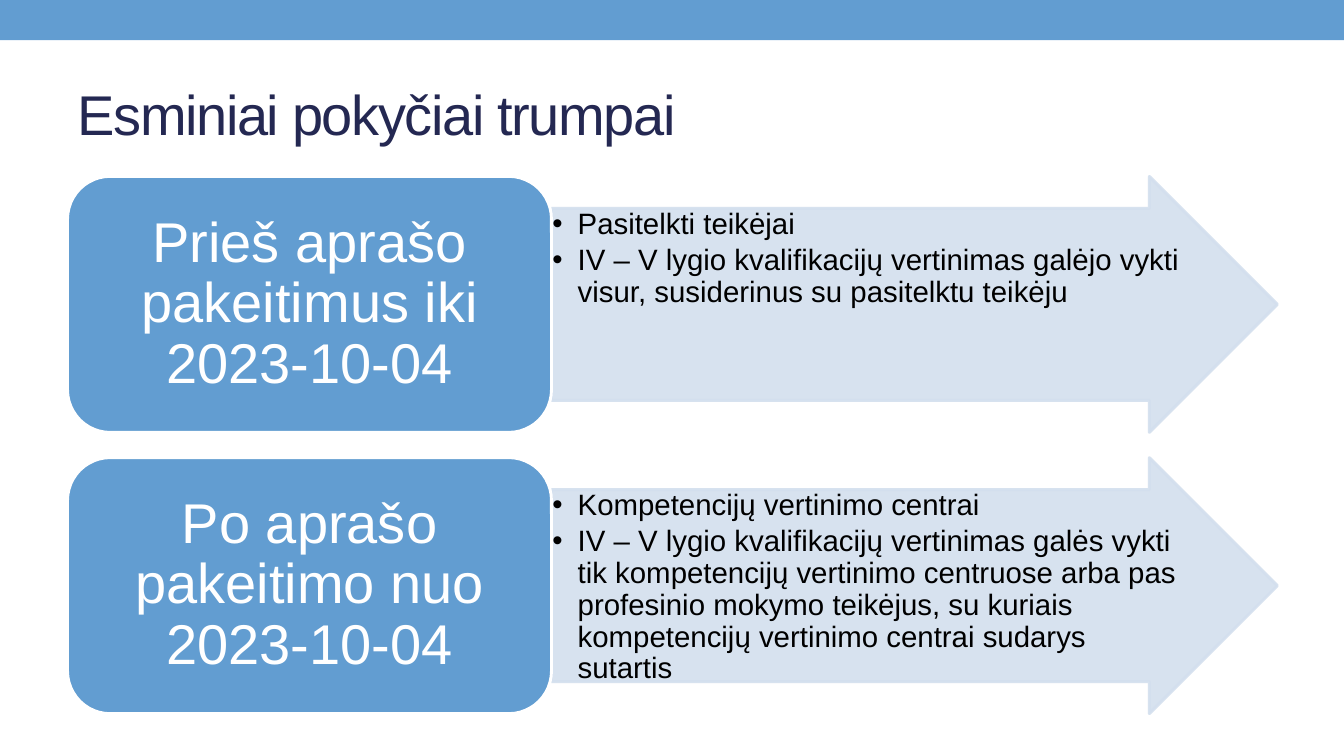
from dataclasses import dataclass

from lxml.etree import SubElement
from pptx import Presentation
from pptx.dml.color import RGBColor
from pptx.enum.shapes import MSO_SHAPE as Preset
from pptx.enum.text import MSO_ANCHOR as Anchor, PP_ALIGN as Align
from pptx.oxml.ns import qn
from pptx.util import Inches, Pt


@dataclass(frozen=True)
class Theme:
    font: str = "Arial"
    blue: RGBColor = RGBColor(0x62, 0x9D, 0xD1)
    pale: RGBColor = RGBColor(0xD3, 0xDF, 0xEE)
    navy: RGBColor = RGBColor(0x24, 0x28, 0x52)
    black: RGBColor = RGBColor(0, 0, 0)
    white: RGBColor = RGBColor(255, 255, 255)
    heading_size: Pt = Pt(40)
    detail_size: Pt = Pt(21)
    outline: Pt = Pt(2.08)
    pale_opacity: int = 90


THEME = Theme()
LEFT, TOP, ROW_HEIGHT, ROW_STEP = 0.67, 1.75, 2.54, 2.79
LABEL_WIDTH, ARROW_WIDTH = 4.8, 7.2

STAGES = [
    ("Prieš aprašo pakeitimus iki 2023-10-04", [
        "Pasitelkti teikėjai",
        "IV – V lygio kvalifikacijų vertinimas galėjo vykti visur, "
        "susiderinus su pasitelktu teikėju",
    ]),
    ("Po aprašo pakeitimo nuo 2023-10-04", [
        "Kompetencijų vertinimo centrai",
        "IV – V lygio kvalifikacijų vertinimas galės vykti tik kompetencijų "
        "vertinimo centruose arba pas profesinio mokymo teikėjus, su kuriais "
        "kompetencijų vertinimo centrai sudarys sutartis",
    ]),
]


def add_run(paragraph, text, size, color):
    run = paragraph.add_run()
    run.text = text
    run.font.name = THEME.font
    run.font.size = size
    run.font.color.rgb = color
    return run


def add_block(slide, preset, left, top, width, height, fill, line=None):
    shape = slide.shapes.add_shape(
        preset, Inches(left), Inches(top), Inches(width), Inches(height))
    shape.shadow.inherit = False
    shape.fill.solid()
    shape.fill.fore_color.rgb = fill
    if line is None:
        shape.line.fill.background()
    else:
        shape.line.color.rgb = line
        shape.line.width = THEME.outline
    return shape


def set_opacity(shape, percent):
    for color in shape._element.spPr.iter(qn("a:srgbClr")):
        SubElement(color, qn("a:alpha"), val=str(percent * 1000))


def set_frame(shape, anchor, side, vertical):
    frame = shape.text_frame
    frame.word_wrap = True
    frame.vertical_anchor = anchor
    frame.margin_left = frame.margin_right = Inches(side)
    frame.margin_top = frame.margin_bottom = Inches(vertical)
    return frame


def add_bullet(paragraph, indent):
    properties = paragraph._p.get_or_add_pPr()
    properties.set("marL", str(Inches(indent)))
    properties.set("indent", str(-Inches(indent)))
    SubElement(properties, qn("a:buFont"), typeface=THEME.font)
    SubElement(properties, qn("a:buChar"), char="•")


def add_details(slide, top, details):
    arrow = add_block(slide, Preset.RIGHT_ARROW, LEFT + LABEL_WIDTH, top,
                      ARROW_WIDTH, ROW_HEIGHT, THEME.pale, THEME.pale)
    arrow.adjustments[0] = 0.75
    arrow.adjustments[1] = 0.5
    set_opacity(arrow, THEME.pale_opacity)
    frame = set_frame(arrow, Anchor.TOP, 0.01, 0.01)
    for index, detail in enumerate(details):
        paragraph = frame.add_paragraph() if index else frame.paragraphs[0]
        paragraph.level = 1
        paragraph.alignment = Align.LEFT
        paragraph.line_spacing = 0.9
        paragraph.space_after = Pt(3)
        add_bullet(paragraph, 0.25)
        add_run(paragraph, detail, THEME.detail_size, THEME.black)


def add_label(slide, top, text):
    label = add_block(slide, Preset.ROUNDED_RECTANGLE, LEFT, top,
                      LABEL_WIDTH, ROW_HEIGHT, THEME.blue, THEME.white)
    paragraph = set_frame(label, Anchor.MIDDLE, 0.17, 0.08).paragraphs[0]
    paragraph.alignment = Align.CENTER
    paragraph.line_spacing = 0.9
    add_run(paragraph, text, THEME.heading_size, THEME.white)


def set_title(slide, text):
    title = slide.shapes.title
    title.left, title.top = Inches(LEFT), Inches(0.58)
    title.width, title.height = Inches(12), Inches(1.08)
    title.text_frame.vertical_anchor = Anchor.MIDDLE
    paragraph = title.text_frame.paragraphs[0]
    paragraph.alignment = Align.LEFT
    run = add_run(paragraph, text, THEME.heading_size, THEME.navy)
    run._r.get_or_add_rPr().set("spc", "-100")


def main():
    presentation = Presentation()
    presentation.slide_width = Inches(13.33)
    presentation.slide_height = Inches(7.5)
    slide = presentation.slides.add_slide(presentation.slide_layouts[5])
    add_block(slide, Preset.RECTANGLE, 0, 0, 13.33, 0.4, THEME.blue)
    set_title(slide, "Esminiai pokyčiai trumpai")
    for index, (label, details) in enumerate(STAGES):
        top = TOP + index * ROW_STEP
        add_details(slide, top, details)
        add_label(slide, top, label)
    presentation.save("out.pptx")


if __name__ == "__main__":
    main()
